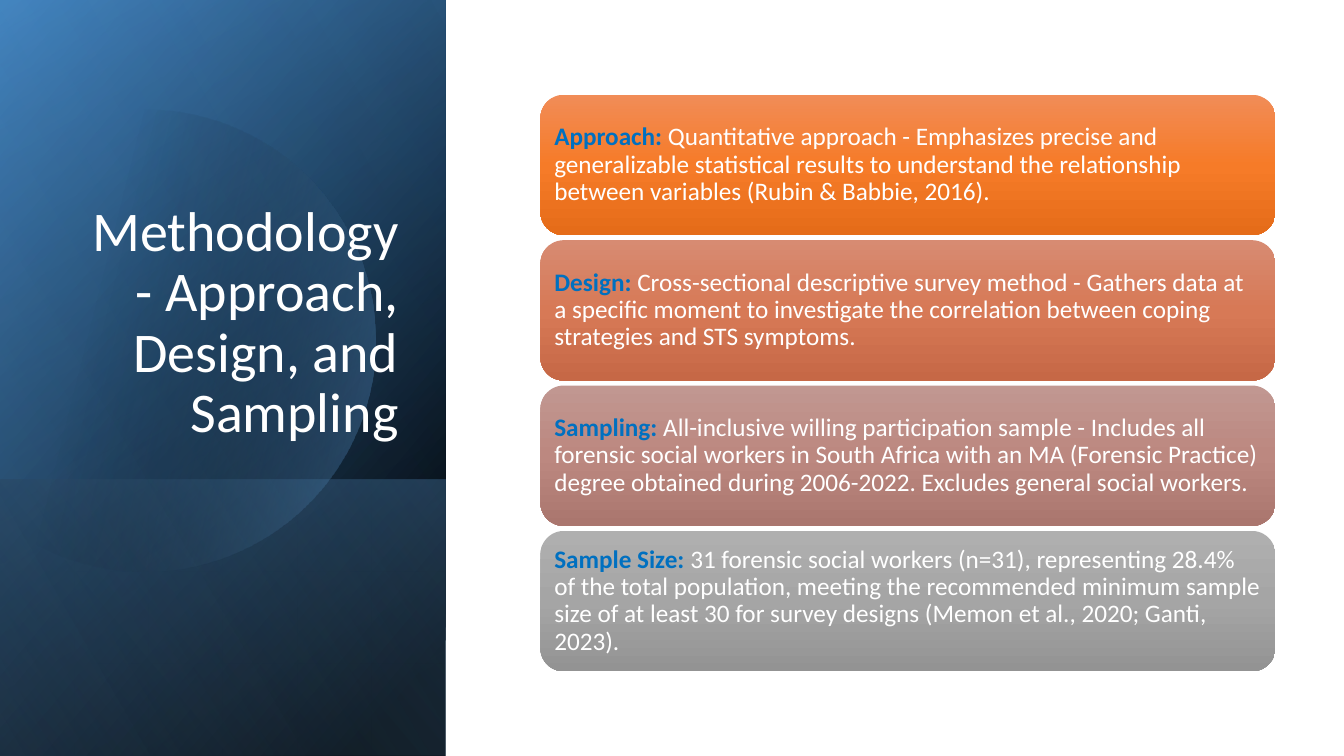
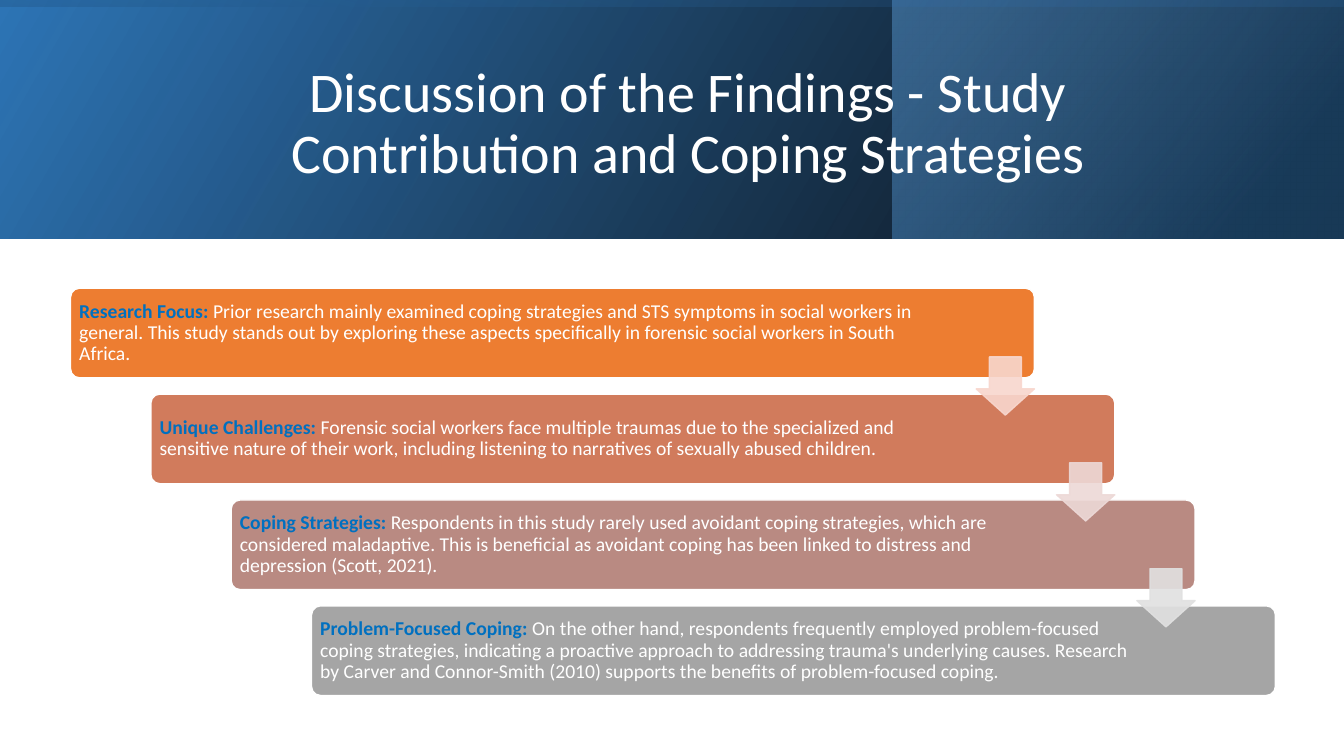
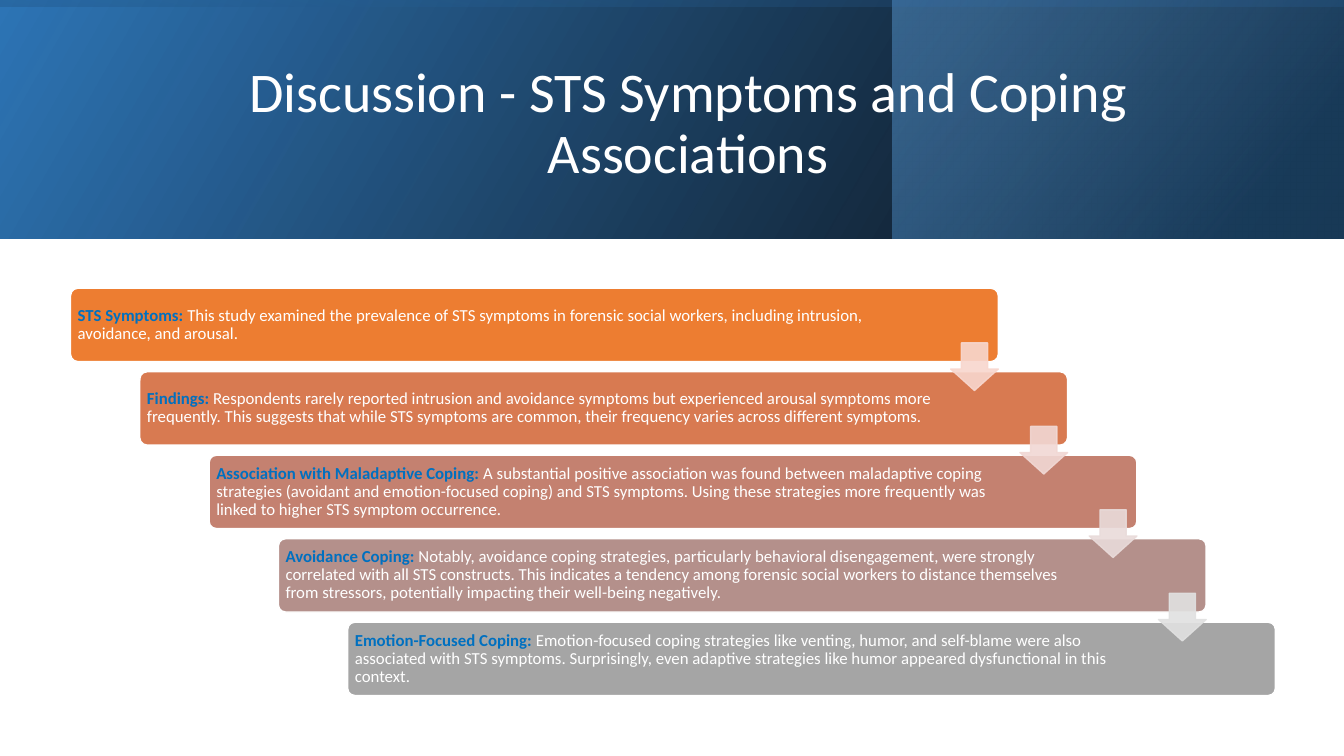
from math import acos, cos, sin

from lxml.etree import SubElement
from pptx import Presentation
from pptx.dml.color import RGBColor
from pptx.enum.shapes import MSO_SHAPE
from pptx.enum.text import MSO_ANCHOR, PP_ALIGN
from pptx.oxml.ns import qn
from pptx.util import Inches, Pt

FONT = "Calibri"
WHITE, BLACK = "FFFFFF", "000000"
NAVY, BLUE, SKY, PALE_BLUE = "1F4E79", "2E75B6", "5B9BD5", "9DC3E6"
LABEL_BLUE = "0070C0"
SLIDE_W, SLIDE_H = 13.33, 7.5
PANEL_W = 4.42
BAND_H = 2.37

METHOD_TITLE = "Methodology - Approach, Design, and Sampling"
METHOD_CARDS = [
    ("Approach", "Quantitative approach - Emphasizes precise and generalizable statistical "
     "results to understand the relationship between variables (Rubin & Babbie, 2016).",
     ("F18C57", "F67B28", "E56C19")),
    ("Design", "Cross-sectional descriptive survey method - Gathers data at a specific moment "
     "to investigate the correlation between coping strategies and STS symptoms.",
     ("D78B72", "D77956", "C66846")),
    ("Sampling", "All-inclusive willing participation sample - Includes all forensic social "
     "workers in South Africa with an MA (Forensic Practice) degree obtained during 2006-2022. "
     "Excludes general social workers.",
     ("C19791", "BC8880", "AA766E")),
    ("Sample Size", "31 forensic social workers (n=31), representing 28.4% of the total "
     "population, meeting the recommended minimum sample size of at least 30 for survey "
     "designs (Memon et al., 2020; Ganti, 2023).",
     ("AFAFAF", "A5A5A5", "939393")),
]

CONTRIBUTION_TITLE = "Discussion of the Findings - Study Contribution and Coping Strategies"
CONTRIBUTION_STEPS = [
    ("Research Focus", "Prior research mainly examined coping strategies and STS symptoms in "
     "social workers in general. This study stands out by exploring these aspects specifically "
     "in forensic social workers in South Africa.", "ED7D31"),
    ("Unique Challenges", "Forensic social workers face multiple traumas due to the specialized "
     "and sensitive nature of their work, including listening to narratives of sexually abused "
     "children.", "D17B5C"),
    ("Coping Strategies", "Respondents in this study rarely used avoidant coping strategies, "
     "which are considered maladaptive. This is beneficial as avoidant coping has been linked "
     "to distress and depression (Scott, 2021).", "B98A82"),
    ("Problem-Focused Coping", "On the other hand, respondents frequently employed "
     "problem-focused coping strategies, indicating a proactive approach to addressing trauma's "
     "underlying causes. Research by Carver and Connor-Smith (2010) supports the benefits of "
     "problem-focused coping.", "A5A5A5"),
]

SYMPTOMS_TITLE = "Discussion - STS Symptoms and Coping Associations"
SYMPTOMS_STEPS = [
    ("STS Symptoms", "This study examined the prevalence of STS symptoms in forensic social "
     "workers, including intrusion, avoidance, and arousal.", "ED7D31"),
    ("Findings", "Respondents rarely reported intrusion and avoidance symptoms but experienced "
     "arousal symptoms more frequently. This suggests that while STS symptoms are common, their "
     "frequency varies across different symptoms.", "D87A51"),
    ("Association with Maladaptive Coping", "A substantial positive association was found "
     "between maladaptive coping strategies (avoidant and emotion-focused coping) and STS "
     "symptoms. Using these strategies more frequently was linked to higher STS symptom "
     "occurrence.", "C48170"),
    ("Avoidance Coping", "Notably, avoidance coping strategies, particularly behavioral "
     "disengagement, were strongly correlated with all STS constructs. This indicates a tendency "
     "among forensic social workers to distance themselves from stressors, potentially impacting "
     "their well-being negatively.", "B4908B"),
    ("Emotion-Focused Coping", "Emotion-focused coping strategies like venting, humor, and "
     "self-blame were also associated with STS symptoms. Surprisingly, even adaptive strategies "
     "like humor appeared dysfunctional in this context.", "A5A5A5"),
]


def color(hex_code):
    return RGBColor.from_string(hex_code)


def add_preset(slide, preset, box):
    shape = slide.shapes.add_shape(preset, *map(Inches, box))
    shape.shadow.inherit = False
    shape.line.fill.background()
    return shape


def fill_gradient(shape, stops, angle):
    """Fill with (position %, hex, opacity %) stops; the angle runs clockwise."""
    shape.fill.background()
    properties = shape._element.spPr
    no_fill = properties.find(qn("a:noFill"))
    gradient = SubElement(properties, qn("a:gradFill"), rotWithShape="1")
    properties.replace(no_fill, gradient)
    stop_list = SubElement(gradient, qn("a:gsLst"))
    for position, hex_code, opacity in stops:
        stop = SubElement(stop_list, qn("a:gs"), pos=str(position * 1000))
        tint = SubElement(stop, qn("a:srgbClr"), val=hex_code)
        if opacity < 100:
            SubElement(tint, qn("a:alpha"), val=str(opacity * 1000))
    SubElement(gradient, qn("a:lin"), ang=str(angle * 60000), scaled="0")


def fill_solid(shape, fill, outline, opacity=100):
    shape.fill.solid()
    shape.fill.fore_color.rgb = color(fill)
    shape.line.color.rgb = color(outline)
    shape.line.width = Pt(1)
    if opacity < 100:
        for tint in shape._element.spPr.iter(qn("a:srgbClr")):
            SubElement(tint, qn("a:alpha"), val=str(opacity * 1000))


def add_glow(slide, box, stops, angle, turn=0):
    """Mirrored gradient rectangle that covers box after a turn of 0, 90 or 270 degrees."""
    left, top, width, height = box
    if turn:
        left += (width - height) / 2
        top += (height - width) / 2
        width, height = height, width
    glow = add_preset(slide, MSO_SHAPE.RECTANGLE, (left, top, width, height))
    glow.rotation = turn
    glow._element.spPr.find(qn("a:xfrm")).set("flipH", "1")
    fill_gradient(glow, stops, angle)


def add_title(slide, box, text, align, anchor):
    frame = slide.shapes.add_textbox(*map(Inches, box)).text_frame
    frame.word_wrap = True
    frame.vertical_anchor = anchor
    title = frame.paragraphs[0]
    title.text = text
    title.alignment = align
    title.line_spacing = 0.9
    title.font.name = FONT
    title.font.size = Pt(40)
    title.font.color.rgb = color(WHITE)


def write_point(shape, label, body, size, inset, right_inset):
    frame = shape.text_frame
    frame.word_wrap = True
    frame.vertical_anchor = MSO_ANCHOR.MIDDLE
    frame.margin_left = frame.margin_top = frame.margin_bottom = Inches(inset)
    frame.margin_right = Inches(right_inset)
    point = frame.paragraphs[0]
    point.alignment = PP_ALIGN.LEFT
    point.line_spacing = 0.9
    point.font.name = FONT
    point.font.size = Pt(size)
    for text, hex_code, bold in ((f"{label}: ", LABEL_BLUE, True), (body, WHITE, False)):
        run = point.add_run()
        run.text = text
        run.font.bold = bold
        run.font.color.rgb = color(hex_code)


def add_disc(slide, center_x, center_y, radius):
    """Translucent disc, cut off at the left edge of the slide."""
    reach = acos(-center_x / radius)
    segments = 90
    angles = [reach * (2 * i / segments - 1) for i in range(segments + 1)]
    outline = [(Inches(center_x + radius * cos(a)), Inches(center_y + radius * sin(a)))
               for a in angles]
    builder = slide.shapes.build_freeform(*outline[0])
    builder.add_line_segments(outline[1:], close=True)
    disc = builder.convert_to_shape()
    disc.shadow.inherit = False
    disc.line.fill.background()
    fill_gradient(disc, [(29, BLACK, 0), (100, SKY, 43)], 14)


def add_side_panel(slide, box, title):
    left, top, width, height = box
    foot_h = 2.74
    foot = (left, top + height - foot_h, width, foot_h)
    add_glow(slide, box, [(8, BLACK, 100), (100, BLUE, 100)], 50, turn=90)
    add_glow(slide, box, [(0, BLACK, 0), (99, SKY, 46)], 30, turn=90)
    add_glow(slide, foot, [(2, SKY, 29), (100, BLACK, 30)], 130, turn=90)
    add_disc(slide, left + 1.43, top + 3.38, 2.29)
    add_glow(slide, box, [(0, BLACK, 0), (99, PALE_BLUE, 11)], 120, turn=90)
    add_title(slide, (left + 0.64, top + 1.84, 3.41, 2.62), title,
              PP_ALIGN.RIGHT, MSO_ANCHOR.BOTTOM)


def add_title_band(slide, box, title):
    left, top, width, height = box
    corner_w = 4.48
    corner = (left + width - corner_w, top, corner_w, height)
    add_glow(slide, box, [(0, BLACK, 96), (100, BLUE, 100)], 330)
    add_glow(slide, corner, [(19, NAVY, 68), (100, SKY, 48)], 320)
    add_glow(slide, box, [(23, BLUE, 16), (99, BLACK, 45)], 350, turn=270)
    add_title(slide, (left + 1.51, top + 0.38, 10.63, 1.72), title,
              PP_ALIGN.CENTER, MSO_ANCHOR.MIDDLE)


def add_cards(slide, box, cards):
    left, top, width, height = box
    gap = 0.05
    card_h = (height - gap * (len(cards) - 1)) / len(cards)
    for i, (label, body, shades) in enumerate(cards):
        card = add_preset(slide, MSO_SHAPE.ROUNDED_RECTANGLE,
                          (left, top + i * (card_h + gap), width, card_h))
        fill_gradient(card, [(50 * n, shade, 100) for n, shade in enumerate(shades)], 90)
        write_point(card, label, body, 18, 0.07, 0.07)


def add_staircase(slide, box, steps, arrow_colors, bar_share, size, inset, right_insets):
    """Descending bars; bar_share is a bar's (width, height) as a share of the box."""
    left, top, width, height = box
    bar_w, bar_h = width * bar_share[0], height * bar_share[1]
    shift = (width - bar_w) / (len(steps) - 1)
    drop = (height - bar_h) / (len(steps) - 1)
    first_inset, later_inset = right_insets
    for i, (label, body, fill) in enumerate(steps):
        bar = add_preset(slide, MSO_SHAPE.ROUNDED_RECTANGLE,
                         (left + i * shift, top + i * drop, bar_w, bar_h))
        bar.adjustments[0] = 0.1
        fill_solid(bar, fill, WHITE)
        write_point(bar, label, body, size, inset, later_inset if i else first_inset)

    arrow = 0.65 * bar_h
    for i, hex_code in enumerate(arrow_colors):
        gap_middle = top + i * drop + (bar_h + drop) / 2
        pointer = add_preset(slide, MSO_SHAPE.DOWN_ARROW,
                             (left + i * shift + bar_w - arrow, gap_middle - arrow / 2,
                              arrow, arrow))
        pointer.adjustments[0] = 0.55
        pointer.adjustments[1] = 0.45
        fill_solid(pointer, hex_code, hex_code, opacity=90)


def add_methodology_slide(slide):
    add_side_panel(slide, (0, 0, PANEL_W, SLIDE_H), METHOD_TITLE)
    add_cards(slide, (5.36, 0.94, 7.29, 5.72), METHOD_CARDS)


def add_discussion_slide(slide, title, steps, arrow_colors, **stair_style):
    add_title_band(slide, (0, 0, SLIDE_W, BAND_H), title)
    add_staircase(slide, (0.7, 2.86, 11.95, 4.04), steps, arrow_colors, **stair_style)


def main():
    deck = Presentation()
    deck.slide_width, deck.slide_height = Inches(SLIDE_W), Inches(SLIDE_H)
    blank = deck.slide_layouts[6]
    add_methodology_slide(deck.slides.add_slide(blank))
    add_discussion_slide(deck.slides.add_slide(blank), CONTRIBUTION_TITLE, CONTRIBUTION_STEPS,
                         ("F8D7CE", "EDD9D7", "E1E1E1"), bar_share=(0.8, 0.22),
                         size=14, inset=0.06, right_insets=(1.03, 1.43))
    add_discussion_slide(deck.slides.add_slide(blank), SYMPTOMS_TITLE, SYMPTOMS_STEPS,
                         ("F8D7CE", "F1D8D4", "E9DBDA", "E1E1E1"), bar_share=(0.77, 0.18),
                         size=12, inset=0.05, right_insets=(0.87, 1.2))
    deck.save("out.pptx")


if __name__ == "__main__":
    main()
